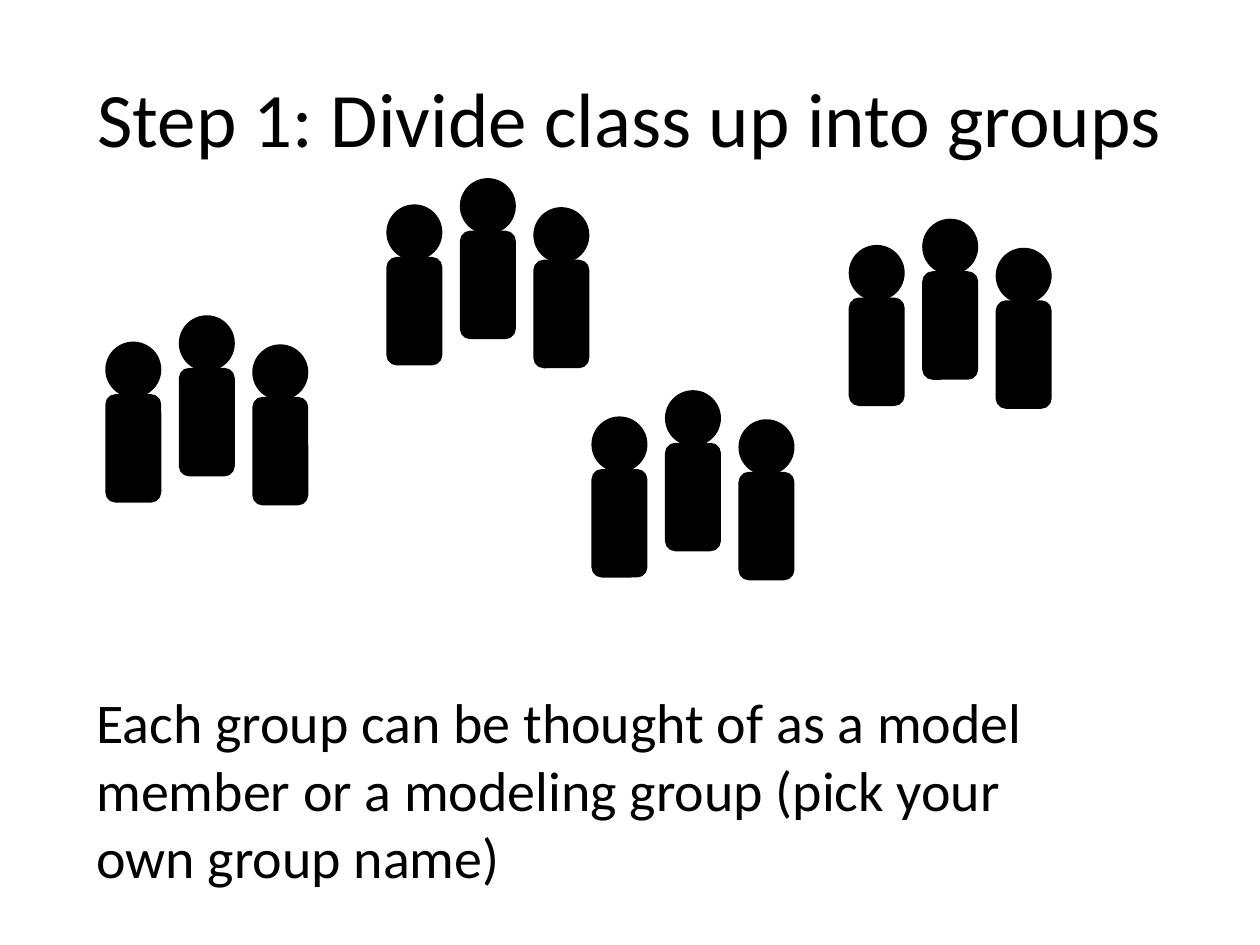
from pptx import Presentation
from pptx.dml.color import RGBColor
from pptx.enum import shapes, text
from pptx.util import Pt

# Content: text, and the left and top of each group
TITLE = "Step 1: Divide class up into groups"
NOTE = ("Each group can be thought of as a model member or a modeling group "
        "(pick your own group name)")
GROUPS = [(61.2, 181.2), (221.8, 102.8), (339, 224), (486, 126)]

THEME = {"ink": RGBColor(0, 0, 0), "paper": RGBColor(255, 255, 255),
         "font": "Calibri", "title": 44, "note": 32, "line": 2}

# One figure: head and body sizes, gap between figures, drop of each one
HEAD, BODY, STEP = 30, 60, 42
DROPS = [15, 0, 16.6]


def add_text(slide, words, box, size, align, anchor):
    frame = slide.shapes.add_textbox(*map(Pt, box)).text_frame
    frame.word_wrap = True
    frame.vertical_anchor = anchor
    para = frame.paragraphs[0]
    para.text = words
    para.alignment = align
    para.font.name = THEME["font"]
    para.font.size = Pt(size)
    para.font.color.rgb = THEME["ink"]


def add_part(group, kind, *box):
    part = group.shapes.add_shape(kind, *map(Pt, box))
    part.shadow.inherit = False
    part.fill.solid()
    part.fill.fore_color.rgb = THEME["ink"]
    part.line.color.rgb = THEME["ink"]
    part.line.width = Pt(THEME["line"])


def add_group(slide, left, top):
    group = slide.shapes.add_group_shape()
    for i, drop in enumerate(DROPS):
        x, y = left + i * STEP, top + drop
        add_part(group, shapes.MSO_SHAPE.OVAL, x, y, HEAD, HEAD)
        add_part(group, shapes.MSO_SHAPE.ROUNDED_RECTANGLE,
                 x, y + HEAD, HEAD, BODY)


def main():
    deck = Presentation()
    deck.slide_width, deck.slide_height = Pt(720), Pt(540)
    slide = deck.slides.add_slide(deck.slide_layouts[6])
    slide.background.fill.solid()
    slide.background.fill.fore_color.rgb = THEME["paper"]

    # Title and note
    add_text(slide, TITLE, (36, 21.6, 648, 90), THEME["title"],
             text.PP_ALIGN.CENTER, text.MSO_ANCHOR.MIDDLE)
    add_text(slide, NOTE, (48, 389.6, 552, 123.8), THEME["note"],
             text.PP_ALIGN.LEFT, text.MSO_ANCHOR.TOP)

    # Groups of three people
    for left, top in GROUPS:
        add_group(slide, left, top)

    deck.save("out.pptx")


if __name__ == "__main__":
    main()
